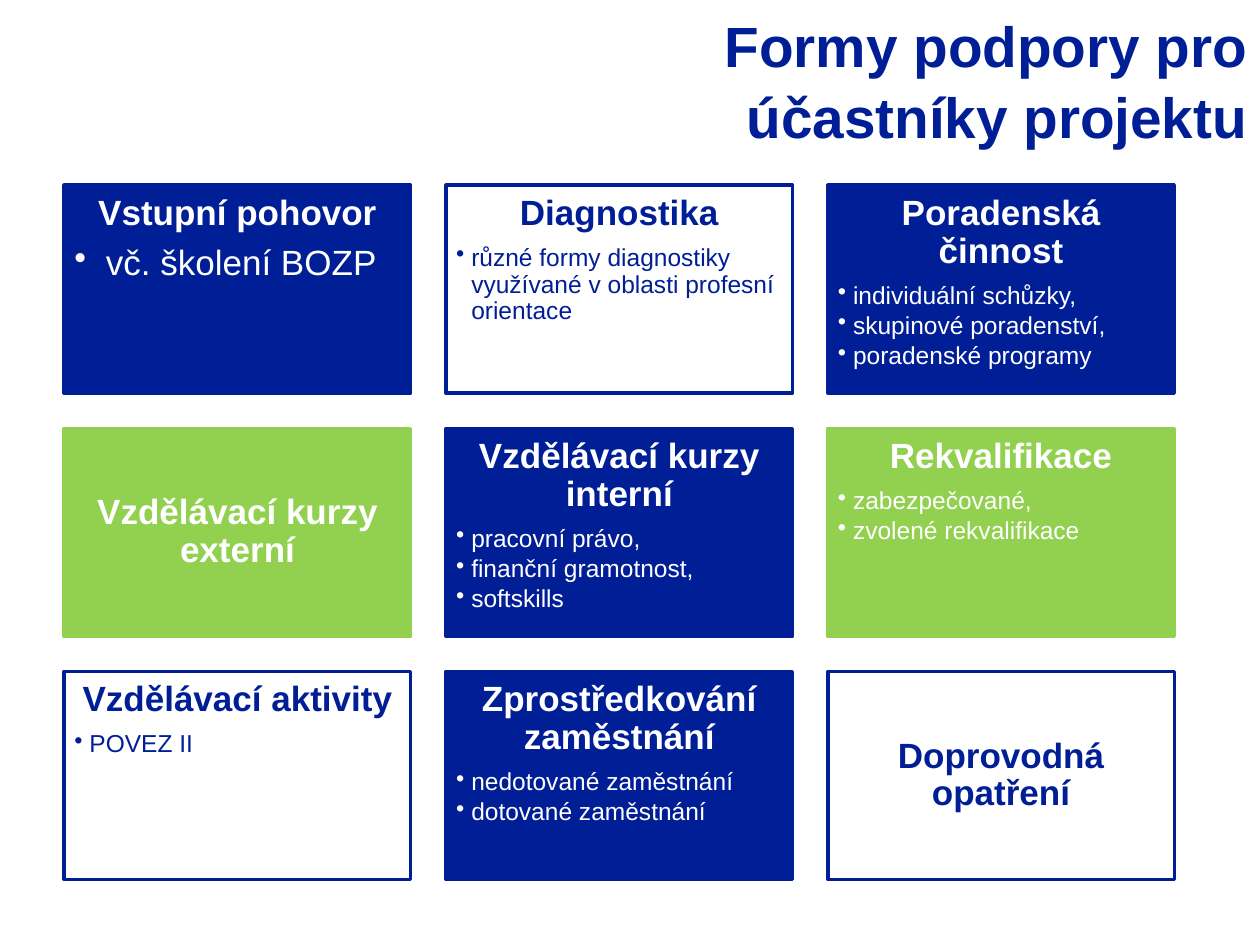
from dataclasses import dataclass

from lxml.etree import SubElement
from pptx import Presentation
from pptx.dml.color import RGBColor
from pptx.enum.shapes import MSO_SHAPE
from pptx.enum.text import MSO_ANCHOR, MSO_AUTO_SIZE, PP_ALIGN
from pptx.oxml.ns import qn
from pptx.util import Inches, Pt


@dataclass(frozen=True)
class Theme:
    navy: RGBColor = RGBColor(0x00, 0x1E, 0x96)
    green: RGBColor = RGBColor(0x92, 0xD0, 0x50)
    white: RGBColor = RGBColor(0xFF, 0xFF, 0xFF)
    font: str = "Arial"
    title_size: float = 32.4
    heading_size: float = 20
    detail_size: float = 14
    heading_gap: float = 0.35
    detail_gap: float = 0.15


@dataclass(frozen=True)
class CardStyle:
    fill: RGBColor
    border: RGBColor
    ink: RGBColor


def apply_format(target, values):
    for name, value in values.items():
        setattr(target, name, value)


class SlideBuilder:
    def __init__(self, slide, theme):
        self.slide = slide
        self.theme = theme

    def format_font(self, paragraph, size, color, bold):
        apply_format(paragraph.font, {"name": self.theme.font, "size": Pt(size), "bold": bold})
        paragraph.font.color.rgb = color

    def title(self, wording, left, top, width, height):
        heading = self.slide.shapes.title
        apply_format(heading, {
            "left": Inches(left), "top": Inches(top),
            "width": Inches(width), "height": Inches(height),
        })
        frame = heading.text_frame
        frame.text = wording
        apply_format(frame, {
            "word_wrap": True, "auto_size": MSO_AUTO_SIZE.NONE,
            "vertical_anchor": MSO_ANCHOR.MIDDLE,
        })
        paragraph = frame.paragraphs[0]
        apply_format(paragraph, {"alignment": PP_ALIGN.RIGHT, "line_spacing": 1.04})
        self.format_font(paragraph, self.theme.title_size, self.theme.navy, True)

    def bullet(self, paragraph, indent):
        properties = paragraph._p.get_or_add_pPr()
        properties.set("marL", str(Inches(indent)))
        properties.set("indent", str(-Inches(indent)))
        SubElement(properties, qn("a:buChar")).set("char", "•")

    def card(self, left, top, width, height, style, heading, details, detail_size, indent):
        card = self.slide.shapes.add_shape(
            MSO_SHAPE.RECTANGLE, Inches(left), Inches(top), Inches(width), Inches(height))
        card.shadow.inherit = False
        card.fill.solid()
        card.fill.fore_color.rgb = style.fill
        card.line.color.rgb = style.border
        card.line.width = Pt(2)
        frame = card.text_frame
        margin = Inches(0.08)
        apply_format(frame, {
            "word_wrap": True,
            "margin_left": margin, "margin_right": margin,
            "margin_top": margin, "margin_bottom": margin,
            "vertical_anchor": MSO_ANCHOR.TOP if details else MSO_ANCHOR.MIDDLE,
        })
        size = self.theme.heading_size
        frame.text = heading
        first = frame.paragraphs[0]
        apply_format(first, {
            "alignment": PP_ALIGN.CENTER, "line_spacing": 0.9,
            "space_after": Pt(size * self.theme.heading_gap),
        })
        self.format_font(first, size, style.ink, True)
        for detail in details:
            paragraph = frame.add_paragraph()
            paragraph.text = detail
            self.bullet(paragraph, indent)
            apply_format(paragraph, {
                "level": 1, "alignment": PP_ALIGN.LEFT, "line_spacing": 0.9,
                "space_after": Pt(detail_size * self.theme.detail_gap),
            })
            self.format_font(paragraph, detail_size, style.ink, False)


def main():
    theme = Theme()
    navy = CardStyle(theme.navy, theme.navy, theme.white)
    green = CardStyle(theme.green, theme.green, theme.white)
    outlined = CardStyle(theme.white, theme.navy, theme.navy)
    support_forms = [
        (navy, "Vstupní pohovor", ["vč. školení BOZP"]),
        (outlined, "Diagnostika",
         ["různé formy diagnostiky využívané v oblasti profesní orientace"]),
        (navy, "Poradenská činnost",
         ["individuální schůzky,", "skupinové poradenství,", "poradenské programy"]),
        (green, "Vzdělávací kurzy externí", []),
        (navy, "Vzdělávací kurzy interní",
         ["pracovní právo,", "finanční gramotnost,", "softskills"]),
        (green, "Rekvalifikace", ["zabezpečované,", "zvolené rekvalifikace"]),
        (outlined, "Vzdělávací aktivity", ["POVEZ II"]),
        (navy, "Zprostředkování zaměstnání",
         ["nedotované zaměstnání", "dotované zaměstnání"]),
        (outlined, "Doprovodná opatření", []),
    ]

    presentation = Presentation()
    apply_format(presentation, {"slide_width": Inches(10), "slide_height": Inches(7.5)})
    slide = presentation.slides.add_slide(presentation.slide_layouts.get_by_name("Title Only"))
    builder = SlideBuilder(slide, theme)
    builder.title("Formy podpory pro účastníky projektu", 4.53, 0, 5.47, 1.25)

    columns, width, height, gap = 3, 2.75, 1.65, 0.28
    for position, (style, heading, details) in enumerate(support_forms):
        row, column = divmod(position, columns)
        is_entry = position == 0
        builder.card(
            0.51 + column * (width + gap), 1.47 + row * (height + gap), width, height,
            style, heading, details,
            theme.heading_size if is_entry else theme.detail_size,
            0.25 if is_entry else 0.12)
    presentation.save("out.pptx")


if __name__ == "__main__":
    main()
